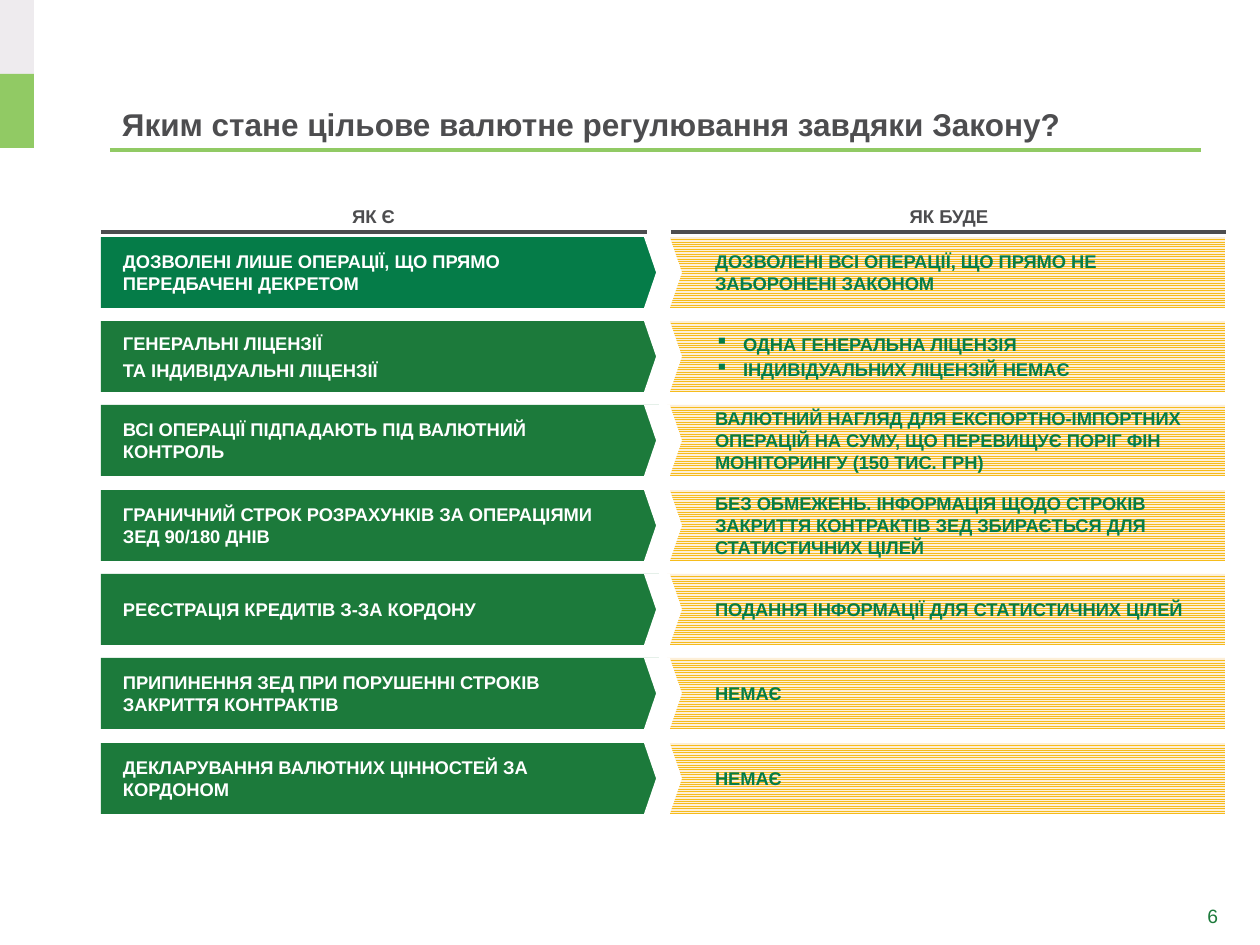
from lxml import etree
from pptx import Presentation
from pptx.dml.color import RGBColor
from pptx.enum.dml import MSO_PATTERN
from pptx.enum.shapes import MSO_CONNECTOR, MSO_SHAPE
from pptx.enum.text import MSO_ANCHOR, PP_ALIGN
from pptx.oxml.ns import qn
from pptx.util import Emu, Pt

SCALE = 914400 / 126
HUES = {"lime": "91CA64", "mist": "EEEBEE", "gray": "4D4D4F", "deep": "057C48",
        "green": "1C7A3B", "gold": "F6BC1C", "cream": "FDEFD7", "white": "FFFFFF"}


def px(*nums):
    return [Emu(round(num * SCALE)) for num in nums]


def write(shape, text, size=10.5, hue="gray", bold=True, align=PP_ALIGN.LEFT,
          anchor=MSO_ANCHOR.MIDDLE, pad=(0, 0, 0, 0), before=0, after=0, line=1, bullet=None):
    frame = shape.text_frame
    frame.word_wrap = True
    frame.vertical_anchor = anchor
    (frame.margin_left, frame.margin_top,
     frame.margin_right, frame.margin_bottom) = px(*pad)
    frame.text = text
    for i, para in enumerate(frame.paragraphs):
        para.alignment = align
        para.line_spacing = line
        para.space_before = Pt(before if i else 0)
        para.space_after = Pt(after)
        if bullet:
            props = para._p.get_or_add_pPr()
            indent = px(28)[0]
            props.set("marL", str(indent))
            props.set("indent", str(-indent))
            etree.SubElement(props, qn("a:buChar"), char=bullet)
        font = para.font
        font.name, font.size, font.bold = "Arial", Pt(size), bold
        font.color.rgb = RGBColor.from_string(HUES[hue])


deck = Presentation()
deck.slide_width, deck.slide_height = px(1260, 945)
slide = deck.slides.add_slide(deck.slide_layouts[6])
shapes = slide.shapes

# Left edge blocks
for top, hue in ((0, "mist"), (74, "lime")):
    block = shapes.add_shape(MSO_SHAPE.RECTANGLE, *px(0, top, 34, 74))
    block.shadow.inherit = False
    block.fill.solid()
    block.fill.fore_color.rgb = RGBColor.from_string(HUES[hue])
    block.line.fill.background()

# Title, column heads and page number
title = shapes.add_textbox(*px(110, 49, 1091, 100))
write(title, "Яким стане цільове валютне регулювання завдяки Закону?", size=18,
      anchor=MSO_ANCHOR.BOTTOM, pad=(12, 6, 12, 6))
for text, left, width in (("ЯК Є", 190, 367), ("ЯК БУДЕ", 671, 556)):
    head = shapes.add_textbox(*px(left, 208, width, 20))
    write(head, text, size=10.6, align=PP_ALIGN.CENTER, anchor=MSO_ANCHOR.TOP, line=0.9)
number = shapes.add_textbox(*px(1134, 896, 93, 39))
write(number, "6", size=11, hue="green", bold=False, align=PP_ALIGN.RIGHT, pad=(9, 5, 9, 5))

# Rules
for left, right, top, hue, width in ((110, 1201, 150, "lime", 2.25),
                                     (101, 647, 232, "gray", 2),
                                     (671, 1226, 232, "gray", 2)):
    rule = shapes.add_connector(MSO_CONNECTOR.STRAIGHT, *px(left, top, right, top))
    rule.line.color.rgb = RGBColor.from_string(HUES[hue])
    rule.line.width = Pt(width)
    etree.SubElement(rule._element.spPr, qn("a:effectLst"))

# Rows: now, then
rows = [
    ("ДОЗВОЛЕНІ ЛИШЕ ОПЕРАЦІЇ, ЩО ПРЯМО ПЕРЕДБАЧЕНІ ДЕКРЕТОМ",
     "ДОЗВОЛЕНІ ВСІ ОПЕРАЦІЇ, ЩО ПРЯМО НЕ ЗАБОРОНЕНІ ЗАКОНОМ"),
    ("ГЕНЕРАЛЬНІ ЛІЦЕНЗІЇ\nТА ІНДИВІДУАЛЬНІ ЛІЦЕНЗІЇ",
     "ОДНА ГЕНЕРАЛЬНА ЛІЦЕНЗІЯ\nІНДИВІДУАЛЬНИХ ЛІЦЕНЗІЙ НЕМАЄ"),
    ("ВСІ ОПЕРАЦІЇ ПІДПАДАЮТЬ ПІД ВАЛЮТНИЙ КОНТРОЛЬ",
     "ВАЛЮТНИЙ НАГЛЯД ДЛЯ ЕКСПОРТНО-ІМПОРТНИХ ОПЕРАЦІЙ НА СУМУ, "
     "ЩО ПЕРЕВИЩУЄ ПОРІГ ФІН МОНІТОРИНГУ (150 ТИС. ГРН)"),
    ("ГРАНИЧНИЙ СТРОК РОЗРАХУНКІВ ЗА ОПЕРАЦІЯМИ ЗЕД 90/180 ДНІВ",
     "БЕЗ ОБМЕЖЕНЬ. ІНФОРМАЦІЯ ЩОДО СТРОКІВ ЗАКРИТТЯ КОНТРАКТІВ ЗЕД "
     "ЗБИРАЄТЬСЯ ДЛЯ СТАТИСТИЧНИХ ЦІЛЕЙ"),
    ("РЕЄСТРАЦІЯ КРЕДИТІВ З-ЗА КОРДОНУ",
     "ПОДАННЯ ІНФОРМАЦІЇ ДЛЯ СТАТИСТИЧНИХ ЦІЛЕЙ"),
    ("ПРИПИНЕННЯ ЗЕД ПРИ ПОРУШЕННІ СТРОКІВ ЗАКРИТТЯ КОНТРАКТІВ", "НЕМАЄ"),
    ("ДЕКЛАРУВАННЯ ВАЛЮТНИХ ЦІННОСТЕЙ ЗА КОРДОНОМ", "НЕМАЄ"),
]
for i, (now, then) in enumerate(rows):
    top = 237 + 506 * i // 6
    left = shapes.add_shape(MSO_SHAPE.RECTANGLE, *px(101, top, 558, 71))
    right = shapes.add_shape(MSO_SHAPE.RECTANGLE, *px(667, top, 558, 71))
    notch = shapes.add_shape(MSO_SHAPE.CHEVRON, *px(644, top, 38, 71))
    notch.adjustments[0] = 0.32
    for shape, hue in ((left, "green" if i else "deep"), (notch, "white")):
        shape.fill.solid()
        shape.fill.fore_color.rgb = RGBColor.from_string(HUES[hue])
    right.fill.patterned()
    right.fill.pattern = MSO_PATTERN.NARROW_HORIZONTAL
    right.fill.fore_color.rgb = RGBColor.from_string(HUES["gold"])
    right.fill.back_color.rgb = RGBColor.from_string(HUES["cream"])
    for shape in (left, right, notch):
        shape.shadow.inherit = False
        shape.line.fill.background()
    write(left, now, hue="white", pad=(22, 5, 48, 5), before=2.8)
    write(right, then, hue="deep", pad=(48, 5, 11, 5), after=2.1,
          bullet="▪" if "\n" in then else None)

deck.save("out.pptx")
